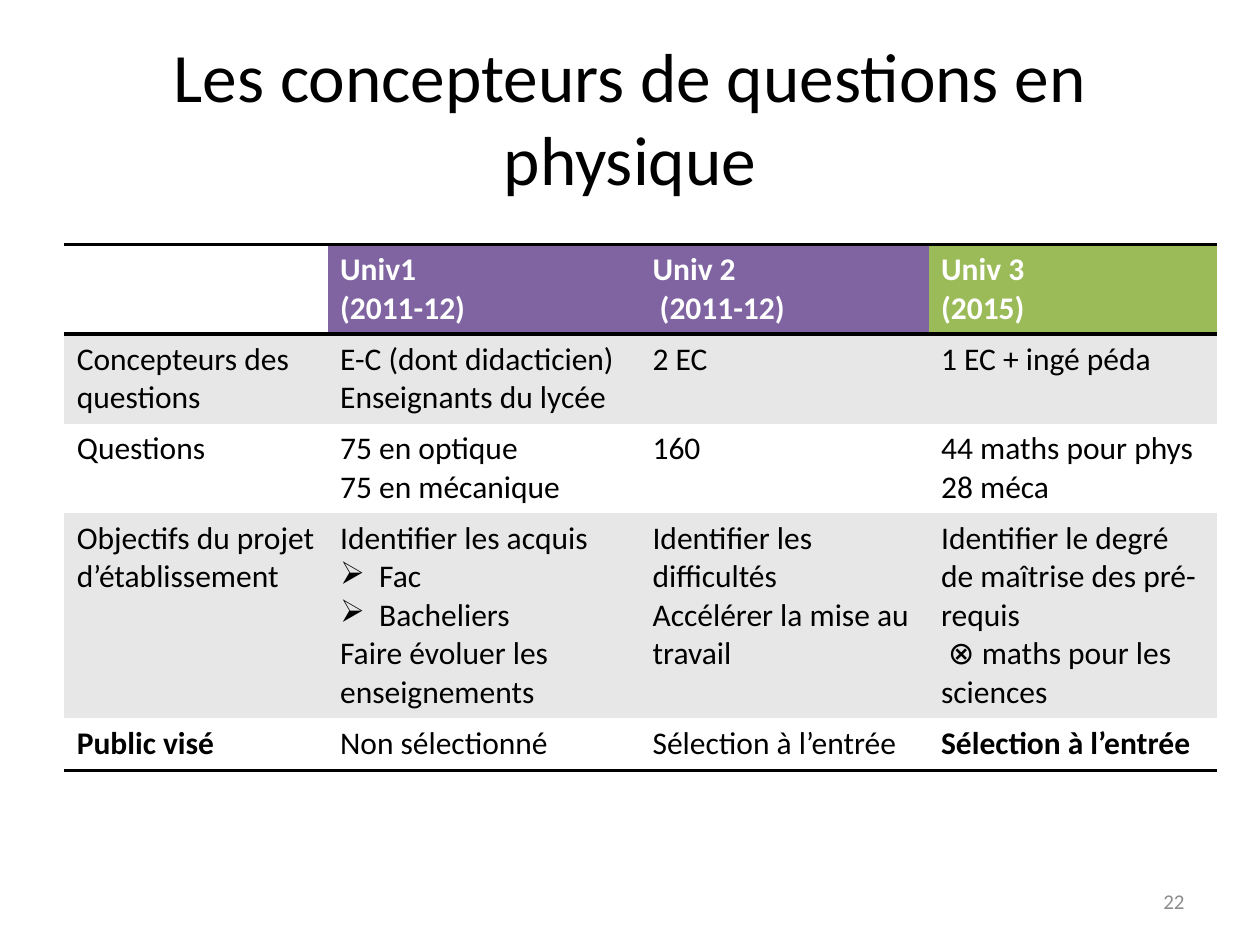
from lxml.etree import SubElement
from pptx import Presentation
from pptx.dml.color import RGBColor
from pptx.enum.text import MSO_ANCHOR, PP_ALIGN
from pptx.oxml import parse_xml
from pptx.oxml.ns import nsdecls, qn
from pptx.util import Inches, Pt

COLORS = {"black": "000000", "white": "FFFFFF", "purple": "8064A2",
          "green": "9BBB59", "band": "E7E7E7", "number": "8C8C8C"}
NO_STYLE = "{2D5ABB26-0587-4C30-8999-92F81FD0307C}"
BULLET = "➢"

COLUMN_WIDTHS = [2.09, 2.48, 2.29, 2.29]
ROW_HEIGHTS = [0.71, 0.71, 0.71, 1.63, 0.41]
HEADER_FILLS = ["white", "purple", "purple", "green"]
BOLD_CELLS = {(4, 0), (4, 3)}

# Each cell is a list of paragraphs
ROWS = [
    [[], ["Univ1", "(2011-12)"], ["Univ 2", " (2011-12)"], ["Univ 3", "(2015)"]],
    [["Concepteurs des questions"],
     ["E-C (dont didacticien) Enseignants du lycée"],
     ["2 EC"],
     ["1 EC + ingé péda"]],
    [["Questions"],
     ["75 en optique", "75 en mécanique"],
     ["160"],
     ["44 maths pour phys", "28 méca"]],
    [["Objectifs du projet d’établissement"],
     ["Identifier les acquis", BULLET + "Fac", BULLET + "Bacheliers",
      "Faire évoluer les enseignements"],
     ["Identifier les difficultés", "Accélérer la mise au travail"],
     ["Identifier le degré de maîtrise des pré-requis",
      " ⊗ maths pour les sciences"]],
    [["Public visé"], ["Non sélectionné"], ["Sélection à l’entrée"],
     ["Sélection à l’entrée"]],
]


def add_run(paragraph, text, size, color, bold=False):
    run = paragraph.add_run()
    run.text = text
    run.font.name = "Calibri"
    run.font.size = Pt(size)
    run.font.bold = bold
    run.font.color.rgb = RGBColor.from_string(COLORS[color])


def add_borders(cell, sides):
    """Draw 2 pt black rules on the given sides, listed in schema order (T, B)."""
    properties = cell._tc.get_or_add_tcPr()
    for position, side in enumerate(sides):
        properties.insert(position, parse_xml(
            f'<a:ln{side} {nsdecls("a")} w="{Pt(2)}"><a:solidFill>'
            f'<a:srgbClr val="{COLORS["black"]}"/></a:solidFill></a:ln{side}>'))


prs = Presentation()
prs.slide_width, prs.slide_height = Inches(10), Inches(7.5)
slide = prs.slides.add_slide(prs.slide_layouts[5])

# Title
title = slide.shapes.title
title.left, title.top = Inches(0.5), Inches(0.3)
title.width, title.height = Inches(9), Inches(1.25)
title.text_frame.vertical_anchor = MSO_ANCHOR.MIDDLE
title_line = title.text_frame.paragraphs[0]
title_line.alignment = PP_ALIGN.CENTER
add_run(title_line, "Les concepteurs de questions en physique", 39.6, "black")

# Comparison of the three universities
table = slide.shapes.add_table(
    len(ROWS), len(COLUMN_WIDTHS), Inches(0.51), Inches(1.94),
    Inches(sum(COLUMN_WIDTHS)), Inches(sum(ROW_HEIGHTS))).table
table._tbl.tblPr.find(qn("a:tableStyleId")).text = NO_STYLE
for column, width in zip(table.columns, COLUMN_WIDTHS):
    column.width = Inches(width)
for row, height in zip(table.rows, ROW_HEIGHTS):
    row.height = Inches(height)

for r, row_texts in enumerate(ROWS):
    is_header = r == 0
    for c, lines in enumerate(row_texts):
        cell = table.cell(r, c)
        fill = HEADER_FILLS[c] if is_header else ("band" if r % 2 else "white")
        cell.fill.solid()
        cell.fill.fore_color.rgb = RGBColor.from_string(COLORS[fill])
        if is_header:
            add_borders(cell, "TB")
        elif r == len(ROWS) - 1:
            add_borders(cell, "B")
        for i, line in enumerate(lines):
            frame = cell.text_frame
            paragraph = frame.add_paragraph() if i else frame.paragraphs[0]
            if line.startswith(BULLET):
                properties = paragraph._p.get_or_add_pPr()
                properties.set("marL", str(Inches(0.31)))
                properties.set("indent", str(-Inches(0.31)))
                SubElement(properties, qn("a:buChar"), char=BULLET)
            add_run(paragraph, line.removeprefix(BULLET), 18,
                    "white" if is_header else "black",
                    bold=is_header or (r, c) in BOLD_CELLS)

# Slide number
number_frame = slide.shapes.add_textbox(
    Inches(7.17), Inches(6.95), Inches(2.33), Inches(0.4)).text_frame
number_frame.word_wrap = True
number_frame.vertical_anchor = MSO_ANCHOR.MIDDLE
number_frame.paragraphs[0].alignment = PP_ALIGN.RIGHT
add_run(number_frame.paragraphs[0], "22", 12, "number")

prs.save("out.pptx")
